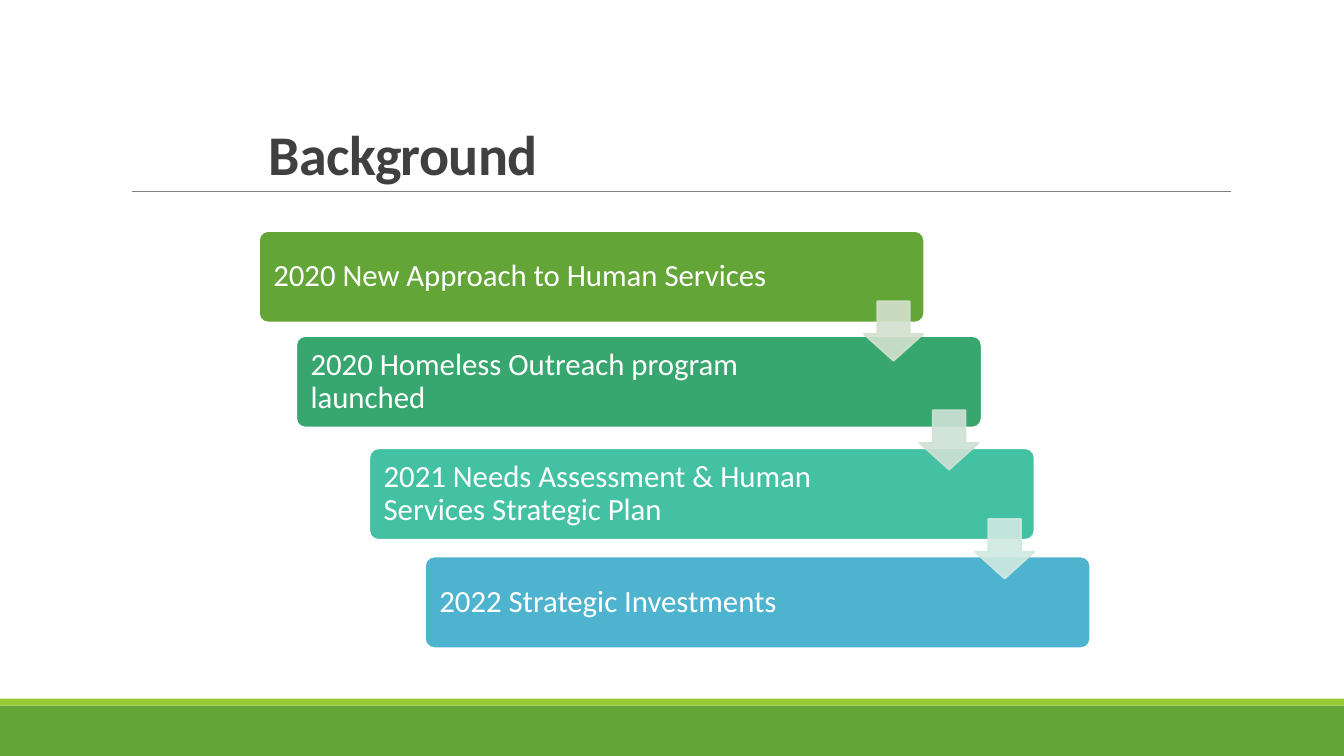
from lxml.etree import SubElement
from pptx import Presentation
from pptx.dml.color import RGBColor
from pptx.enum.shapes import MSO_CONNECTOR, MSO_SHAPE
from pptx.enum.text import MSO_ANCHOR, PP_ALIGN
from pptx.oxml.ns import qn
from pptx.util import Pt

COLORS = {
    "white": "FFFFFF", "title": "404040", "rule": "808080",
    "green": "63A537", "lime": "99CB38", "emerald": "37A76F",
    "teal": "44C1A3", "blue": "4EB3CF",
    "pale green": "D3E1CE", "pale emerald": "CEE1D5", "pale teal": "CFE9E0",
}


def add_block(kind, left, top, width, height, fill, line=None):
    block = page.shapes.add_shape(kind, Pt(left), Pt(top), Pt(width), Pt(height))
    block.shadow.inherit = False
    block.fill.solid()
    block.fill.fore_color.rgb = RGBColor.from_string(COLORS[fill])
    if line:
        block.line.color.rgb = RGBColor.from_string(COLORS[line])
        block.line.width = Pt(1.25)
    else:
        block.line.fill.background()
    return block


def add_text(frame, text, size, color, spacing, anchor):
    frame.word_wrap = True
    frame.vertical_anchor = anchor
    para = frame.paragraphs[0]
    para.alignment = PP_ALIGN.LEFT
    para.line_spacing = spacing
    span = para.add_run()
    span.text = text
    span.font.name = "Calibri"
    span.font.size = Pt(size)
    span.font.color.rgb = RGBColor.from_string(COLORS[color])
    return span


deck = Presentation()
deck.slide_width, deck.slide_height = Pt(960), Pt(540)
page = deck.slides.add_slide(deck.slide_layouts[6])

add_block(MSO_SHAPE.RECTANGLE, 0, 504, 960, 36, "green")
add_block(MSO_SHAPE.RECTANGLE, 0, 499, 960, 5, "lime")

rule = page.shapes.add_connector(MSO_CONNECTOR.STRAIGHT, Pt(94.3), Pt(136.8), Pt(879), Pt(136.8))
rule.line.color.rgb = RGBColor.from_string(COLORS["rule"])
rule.line.width = Pt(0.5)
SubElement(rule._element.spPr, qn("a:effectLst"))

title_box = page.shapes.add_textbox(Pt(185), Pt(22.3), Pt(594), Pt(114.5))
title = add_text(title_box.text_frame, "Background", 40, "title", 0.85, MSO_ANCHOR.BOTTOM)
title.font.bold = True
title._r.get_or_add_rPr().set("spc", "-50")

steps = [
    ("2020 New Approach to Human Services", 185, 165, 475.2, 81, "green"),
    ("2020 Homeless Outreach program launched", 211.6, 240, 489.6, 94, "emerald"),
    ("2021 Needs Assessment & Human Services Strategic Plan", 263.8, 320.2, 475.2, 90, "teal"),
    ("2022 Strategic Investments", 303.6, 397.6, 475.2, 91, "blue"),
]
for text, left, top, width, right_margin, fill in steps:
    bar = add_block(MSO_SHAPE.ROUNDED_RECTANGLE, left, top, width, 65.4, fill, "white")
    bar.adjustments[0] = 0.1
    frame = bar.text_frame
    frame.margin_left, frame.margin_right = Pt(8.4), Pt(right_margin)
    add_text(frame, text, 22, "white", 0.9, MSO_ANCHOR.MIDDLE)

for index, fill in enumerate(["pale green", "pale emerald", "pale teal"]):
    arrow = add_block(MSO_SHAPE.DOWN_ARROW, 617 + 39.7 * index, 215.2 + 77.8 * index,
                      42.5, 42.5, fill, fill)
    arrow.adjustments[0], arrow.adjustments[1] = 0.55, 0.45
    for color in arrow._element.spPr.iter(qn("a:srgbClr")):
        SubElement(color, qn("a:alpha")).set("val", "90000")

deck.save("out.pptx")
